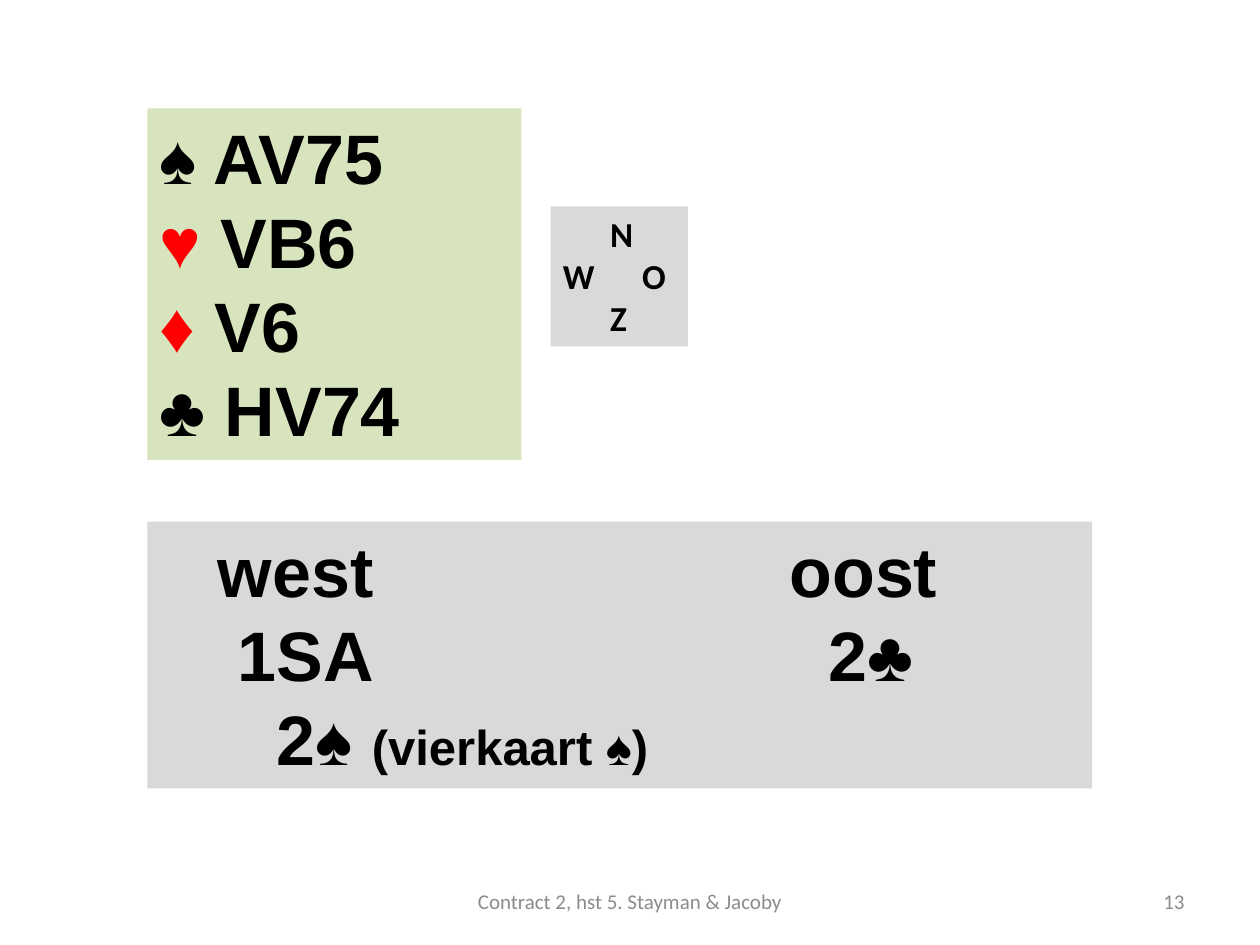
from lxml import etree
from pptx import Presentation
from pptx.dml.color import RGBColor
from pptx.enum import text
from pptx.oxml.ns import qn
from pptx.util import Pt

BLACK = RGBColor(0x00, 0x00, 0x00)
RED = RGBColor(0xFF, 0x00, 0x00)
GREY = RGBColor(0xD9, 0xD9, 0xD9)
GREEN = RGBColor(0xD7, 0xE4, 0xBD)
FOOTER_GREY = RGBColor(0x8C, 0x8C, 0x8C)

prs = Presentation()
prs.slide_width, prs.slide_height = Pt(720), Pt(540)
slide = prs.slides.add_slide(prs.slide_layouts[6])


def add_box(left, top, width, height, fill=None):
    box = slide.shapes.add_textbox(Pt(left), Pt(top), Pt(width), Pt(height))
    box.text_frame.word_wrap = True
    if fill is not None:
        box.fill.solid()
        box.fill.fore_color.rgb = fill
        box.text_frame.auto_size = text.MSO_AUTO_SIZE.SHAPE_TO_FIT_TEXT
    return box.text_frame


def add_line(frame, runs, font, size, color=BLACK, bold=True, tabs=()):
    """Fill the next paragraph; tabs holds the tab stops in points."""
    first = frame.paragraphs[0]
    line = frame.add_paragraph() if first.runs else first
    line.font.name, line.font.size = font, Pt(size)
    line.font.bold, line.font.color.rgb = bold, color
    for words in runs:
        line.add_run().text = words
    if tabs:
        stops = etree.Element(qn("a:tabLst"))
        for stop in tabs:
            etree.SubElement(stops, qn("a:tab"), pos=str(Pt(stop)), algn="l")
        line.font._element.addprevious(stops)
    return line


# Compass
compass = add_box(314.6, 118, 78.5, 80, GREY)
for words, stop in (("\tN", 27), ("W\tO", 45.2), ("\tZ", 27)):
    add_line(compass, [words], "Calibri", 20, tabs=[stop])

# Bidding
bidding = add_box(84.2, 298, 540, 152.6, GREY)
for runs, stops in (
    (["\twest\toost"], [33.3, 360]),
    (["\t1SA\t2♣"], [44.5, 382.2]),
    (["\t2♠ ", "(vierkaart ♠)"], [66.7]),
):
    bid = add_line(bidding, runs, "Arial", 40, tabs=stops)
bid.runs[1].font.size = Pt(28)

# Hand
hand = add_box(84.2, 61.9, 213.8, 200.9, GREEN)
for suit, cards in (("♠", "AV75"), ("♥", "VB6"), ("♦", "V6"), ("♣", "HV74")):
    holding = add_line(hand, [suit, " " + cards], "Arial", 40)
    if suit in "♥♦":
        holding.runs[0].font.color.rgb = RED

# Slide number and footer
for words, left, width, align in (
    ("13", 516, 168, text.PP_ALIGN.RIGHT),
    ("Contract 2, hst 5. Stayman & Jacoby", 246, 228, text.PP_ALIGN.CENTER),
):
    footer = add_box(left, 500.5, width, 28.75)
    footer.vertical_anchor = text.MSO_ANCHOR.MIDDLE
    add_line(footer, [words], "Calibri", 12, FOOTER_GREY, False).alignment = align

prs.save("out.pptx")
